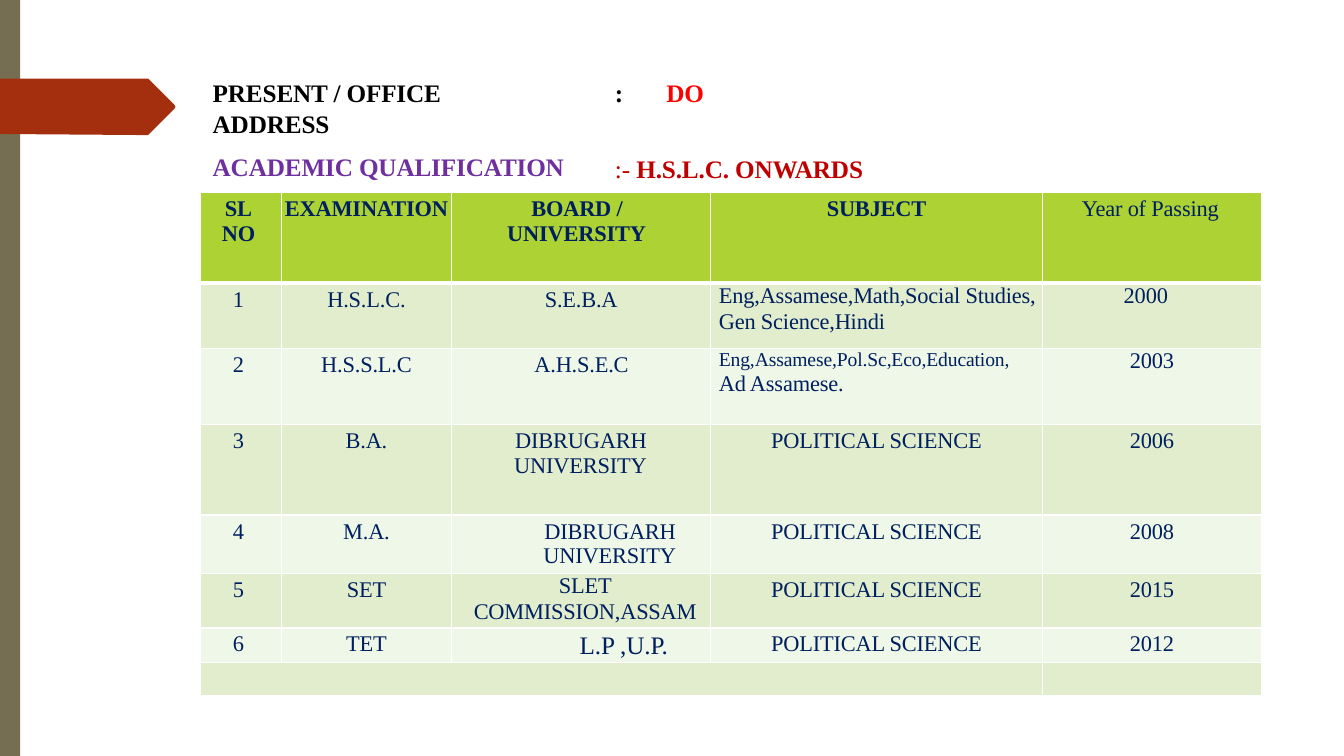
from lxml import etree
from pptx import Presentation
from pptx.dml.color import RGBColor
from pptx.enum.shapes import MSO_SHAPE
from pptx.enum.text import MSO_ANCHOR, MSO_AUTO_SIZE, PP_ALIGN
from pptx.oxml.ns import qn
from pptx.util import Inches, Pt

RECTANGLE = MSO_SHAPE.RECTANGLE
LEFT, CENTER = PP_ALIGN.LEFT, PP_ALIGN.CENTER
TOP = MSO_ANCHOR.TOP
NO_AUTOFIT = MSO_AUTO_SIZE.NONE
BLACK = RGBColor(0x00, 0x00, 0x00)
RED = RGBColor(0xFF, 0x00, 0x00)
CRIMSON = RGBColor(0xC0, 0x00, 0x00)
PURPLE = RGBColor(0x6F, 0x2F, 0x9F)
NAVY = RGBColor(0x00, 0x1F, 0x5F)
LIME = RGBColor(0xAC, 0xD2, 0x33)
SAGE = RGBColor(0xE1, 0xED, 0xCD)
PALE = RGBColor(0xEF, 0xF7, 0xE8)
OLIVE = RGBColor(0x76, 0x6E, 0x53)
RUST = RGBColor(0xA4, 0x2F, 0x0F)


def add_run(paragraph, text, size, color, bold):
    run = paragraph.add_run()
    run.text = text
    run._r.get_or_add_rPr().set("spc", "-10")
    font_format = {"name": "Times New Roman", "size": Pt(size), "bold": bold}
    for attribute, value in font_format.items():
        setattr(run.font, attribute, value)
    run.font.color.rgb = color


def set_frame(frame):
    frame_format = {
        "margin_left": Inches(0.01), "margin_right": 0,
        "margin_top": Inches(0.01), "margin_bottom": 0,
        "word_wrap": True, "auto_size": NO_AUTOFIT, "vertical_anchor": TOP,
    }
    for attribute, value in frame_format.items():
        setattr(frame, attribute, value)


prs = Presentation()
prs.slide_width = Inches(13.33)
prs.slide_height = Inches(7.5)
slide = prs.slides.add_slide(prs.slide_layouts[5])
shapes = slide.shapes

side_bar = shapes.add_shape(RECTANGLE, 0, 0, Inches(0.2), Inches(7.5))
outline = [(0, 1.33), (1.36, 1.34), (1.47, 1.34), (1.48, 1.33), (1.73, 1.08),
           (1.74, 1.06), (1.73, 1.04), (1.48, 0.79), (1.47, 0.78)]
builder = shapes.build_freeform(0, Inches(0.78))
builder.add_line_segments([(Inches(x), Inches(y)) for x, y in outline], close=True)
page_arrow = builder.convert_to_shape()
for decoration, color in ((side_bar, OLIVE), (page_arrow, RUST)):
    decoration.shadow.inherit = False
    decoration.fill.solid()
    decoration.fill.fore_color.rgb = color
    decoration.line.fill.background()

address = shapes.title
address.left, address.top = Inches(2.1), Inches(0.76)
address.width, address.height = Inches(3.45), Inches(0.62)
set_frame(address.text_frame)
address_line = address.text_frame.paragraphs[0]
address_line.alignment = LEFT
add_run(address_line, "PRESENT / OFFICE ADDRESS", 18, BLACK, True)

qualification = shapes.add_textbox(Inches(2.1), Inches(1.49), Inches(3.6), Inches(0.33))
set_frame(qualification.text_frame)
add_run(qualification.text_frame.paragraphs[0], "ACADEMIC QUALIFICATION", 18, PURPLE, True)

details = shapes.add_textbox(Inches(6.09), Inches(0.76), Inches(2.7), Inches(1.06))
set_frame(details.text_frame)
office = details.text_frame.paragraphs[0]
tabs = etree.SubElement(office._p.get_or_add_pPr(), qn("a:tabLst"))
etree.SubElement(tabs, qn("a:tab"), pos=str(Inches(0.51)), algn="l")
add_run(office, ":\t", 18, BLACK, True)
add_run(office, "DO", 18, RED, True)
onwards = details.text_frame.add_paragraph()
onwards.space_before = Pt(32.5)
add_run(onwards, ":- ", 18, CRIMSON, False)
add_run(onwards, "H.S.L.C. ONWARDS", 18, CRIMSON, True)

records = [
    ["SL NO", "EXAMINATION", "BOARD / UNIVERSITY", "SUBJECT", "Year of Passing"],
    ["1", "H.S.L.C.", "S.E.B.A",
     "Eng,Assamese,Math,Social Studies,\nGen Science,Hindi", "2000"],
    ["2", "H.S.S.L.C", "A.H.S.E.C",
     "Eng,Assamese,Pol.Sc,Eco,Education,\nAd Assamese.", "2003"],
    ["3", "B.A.", "DIBRUGARH UNIVERSITY", "POLITICAL SCIENCE", "2006"],
    ["4", "M.A.", "DIBRUGARH UNIVERSITY", "POLITICAL SCIENCE", "2008"],
    ["5", "SET", "SLET\nCOMMISSION,ASSAM", "POLITICAL SCIENCE", "2015"],
    ["6", "TET", "L.P ,U.P.", "POLITICAL SCIENCE", "2012"],
    ["", "", "", "", ""],
]
column_widths = [0.8, 1.69, 2.57, 3.29, 2.17]
row_heights = [0.9, 0.65, 0.75, 0.9, 0.58, 0.54, 0.34, 0.33]
left_indents = {
    (0, 0): (0.21, 0.03), (0, 2): (0.55, 0.24), (0, 4): (0.39, 0),
    (1, 3): (0.08, 0), (2, 2): (0.82, 0), (2, 3): (0.08, 0),
    (3, 2): (0.62, 0.01), (4, 2): (0.91, 0.01), (6, 2): (1.27, 0),
}
flush_top = {(1, 3), (1, 4), (2, 3), (2, 4), (5, 2)}
right_margins = {(1, 4): 0.12, (1, 0): 0.05, (2, 0): 0.05, (3, 0): 0.05,
                 (4, 0): 0.05, (5, 0): 0.05, (6, 0): 0.05}
line_sizes = {(2, 3, 0): 14, (6, 2, 0): 18}

table = shapes.add_table(len(records), len(column_widths), Inches(1.99), Inches(1.91),
                         Inches(sum(column_widths)), Inches(sum(row_heights))).table
for column, width in zip(table.columns, column_widths):
    column.width = Inches(width)
for row, height in zip(table.rows, row_heights):
    row.height = Inches(height)
last = len(records) - 1
table.cell(last, 0).merge(table.cell(last, 3))

for r, record in enumerate(records):
    for c, text in enumerate(record):
        cell = table.cell(r, c)
        top_margin = 0 if r == last or (r, c) in flush_top else 0.04
        cell_format = {
            "margin_left": 0, "margin_right": Inches(right_margins.get((r, c), 0)),
            "margin_top": Inches(top_margin), "margin_bottom": 0,
            "vertical_anchor": TOP,
        }
        for attribute, value in cell_format.items():
            setattr(cell, attribute, value)
        for side in "LRTB":
            thick = (r, side) in ((0, "B"), (1, "T"))
            border = etree.SubElement(cell._tc.get_or_add_tcPr(), qn("a:ln" + side),
                                      w=str(Pt(3 if thick else 1)))
            border_fill = etree.SubElement(border, qn("a:solidFill"))
            etree.SubElement(border_fill, qn("a:srgbClr"), val="FFFFFF")
        cell.fill.solid()
        cell.fill.fore_color.rgb = LIME if r == 0 else SAGE if r % 2 else PALE
        if not text:
            continue
        for n, line in enumerate(text.split("\n")):
            frame = cell.text_frame
            paragraph = frame.add_paragraph() if n else frame.paragraphs[0]
            paragraph.alignment = LEFT if (r, c) in left_indents else CENTER
            margin, first_line = left_indents.get((r, c), (0.08 if (r, c) == (5, 2) else 0, 0))
            properties = paragraph._p.get_or_add_pPr()
            properties.set("marL", str(Inches(margin)))
            properties.set("indent", str(Inches(first_line)))
            if n:
                paragraph.space_before = Pt(1)
            add_run(paragraph, line, line_sizes.get((r, c, n), 16), NAVY, r == 0 and c < 4)

prs.save("out.pptx")
